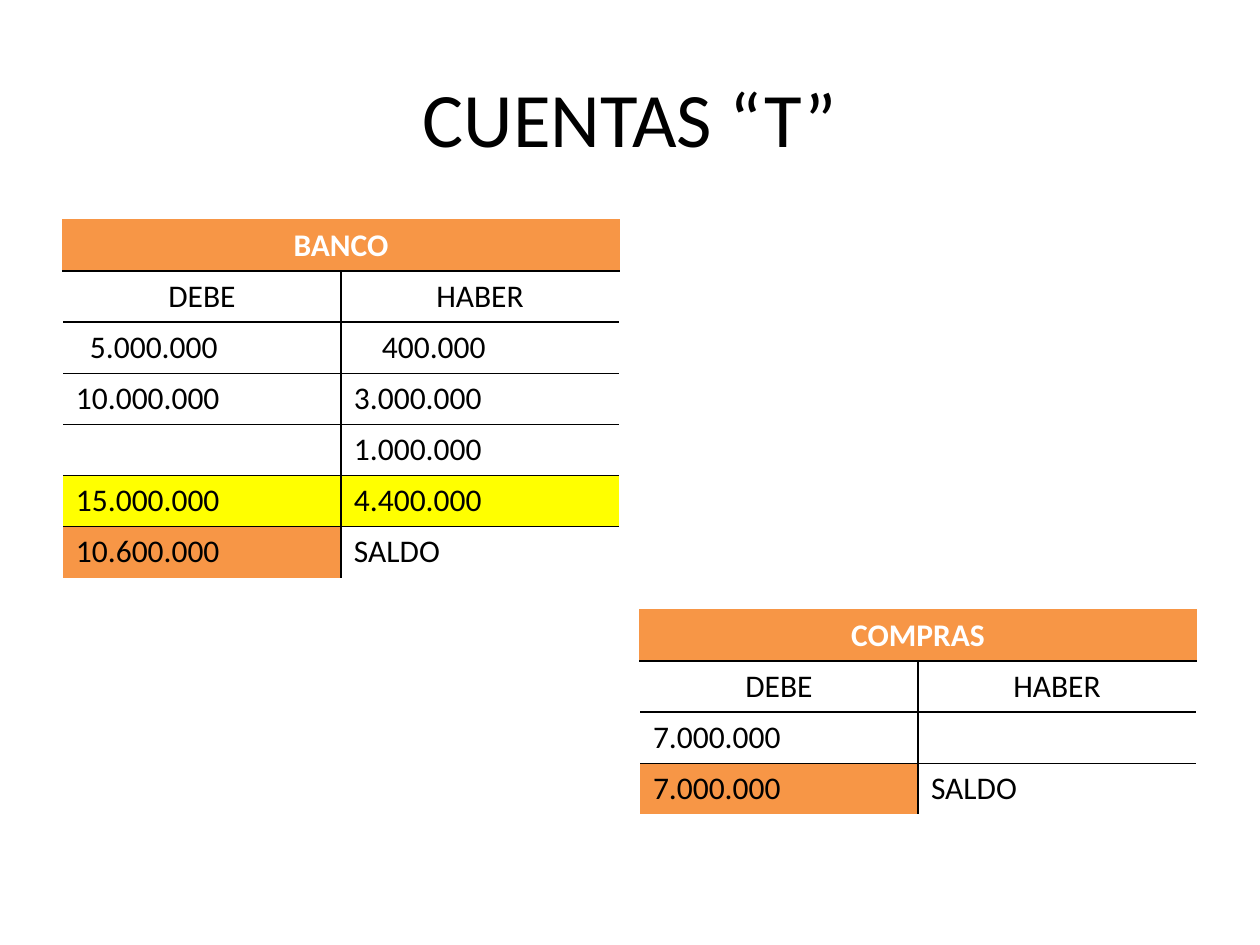
from lxml import etree
from pptx import Presentation
from pptx.dml.color import RGBColor
from pptx.enum.text import MSO_ANCHOR, PP_ALIGN
from pptx.oxml.ns import qn
from pptx.util import Emu, Pt

CENTER, LEFT, JUSTIFY = PP_ALIGN.CENTER, PP_ALIGN.LEFT, PP_ALIGN.JUSTIFY
MIDDLE = MSO_ANCHOR.MIDDLE
BLACK = RGBColor(0x00, 0x00, 0x00)
WHITE = RGBColor(0xFF, 0xFF, 0xFF)
ORANGE = RGBColor(0xF7, 0x96, 0x46)
YELLOW = RGBColor(0xFF, 0xFF, 0x00)
FONT = "Calibri"
TITLE_LAYOUT = 5
EMU_PER_PX = 914400 / 126
COLUMN_WIDTH, ROW_HEIGHT = 278, 51
CELL_MARGIN, SPACE_WIDTH = 13, 7

BANK_ENTRIES = [
    ("5.000.000", "400.000"),
    ("10.000.000", "3.000.000"),
    ("", "1.000.000"),
    ("15.000.000", "4.400.000"),
    ("10.600.000", "SALDO"),
]
PURCHASE_ENTRIES = [("7.000.000", ""), ("7.000.000", "SALDO")]


def px(length):
    """Convert pixels to EMU."""
    return Emu(round(length * EMU_PER_PX))


def format_text(text_frame, size, color, alignment, bold=False):
    """Format every run of a text frame."""
    for paragraph in text_frame.paragraphs:
        paragraph.alignment = alignment
        for run in paragraph.runs:
            run.font.name = FONT
            run.font.size = Pt(size)
            run.font.bold = bold
            run.font.color.rgb = color


def set_borders(cell, colors):
    """Draw the sides named in colors and hide the others."""
    properties = cell._tc.get_or_add_tcPr()
    for index, side in enumerate("LRTB"):
        line = etree.Element(qn(f"a:ln{side}"), w=str(Pt(1)))
        if side in colors:
            fill = etree.SubElement(line, qn("a:solidFill"))
            etree.SubElement(fill, qn("a:srgbClr"), val=str(colors[side]))
        else:
            etree.SubElement(line, qn("a:noFill"))
        properties.insert(index, line)


def fill_cell(cell, text, alignment, borders, fill=None, color=BLACK, bold=False):
    """Set the text, fill and borders of a cell."""
    cell.text = text
    cell.margin_left = cell.margin_right = px(CELL_MARGIN)
    format_text(cell.text_frame, 18, color, alignment, bold)
    if fill is None:
        cell.fill.background()
    else:
        cell.fill.solid()
        cell.fill.fore_color.rgb = fill
    set_borders(cell, borders)


def add_account(slide, name, entries, left, top):
    """Add a T account whose last entry is the balance."""
    rows = [("DEBE", "HABER"), *entries]
    row_count = len(rows) + 1
    frame = slide.shapes.add_table(
        row_count, 2, px(left), px(top), px(2 * COLUMN_WIDTH), px(row_count * ROW_HEIGHT)
    )
    table = frame.table
    table.first_row = table.horz_banding = False
    for column in table.columns:
        column.width = px(COLUMN_WIDTH)
    for row in table.rows:
        row.height = px(ROW_HEIGHT)

    header = table.cell(0, 0)
    header.merge(table.cell(0, 1))
    header_borders = {"L": ORANGE, "R": ORANGE, "T": ORANGE, "B": BLACK}
    for column in range(2):
        fill_cell(table.cell(0, column), "", CENTER, header_borders, ORANGE)
    header.text = name
    format_text(header.text_frame, 18, WHITE, CENTER, bold=True)

    for row_index, texts in enumerate(rows, start=1):
        is_balance = row_index == row_count - 1
        for column, text in enumerate(texts):
            sides = ("R", "L")[column] + ("T" if is_balance else "TB")
            alignment = CENTER if row_index == 1 else (LEFT, JUSTIFY)[column]
            fill = ORANGE if is_balance and column == 0 else None
            fill_cell(
                table.cell(row_index, column), text, alignment,
                dict.fromkeys(sides, BLACK), fill,
            )
    return table


def indent_cell(cell, spaces):
    """Move a short amount to the right by a number of space widths."""
    cell.margin_left = px(CELL_MARGIN + spaces * SPACE_WIDTH)


def add_title(slide, text):
    """Place and format the slide title."""
    title = slide.shapes.title
    title.left, title.top = px(63), px(38)
    title.width, title.height = px(1134), px(157)
    title.text_frame.text = text
    title.text_frame.vertical_anchor = MIDDLE
    format_text(title.text_frame, 44, BLACK, CENTER)


def main():
    """Build the slide of T accounts."""
    presentation = Presentation()
    presentation.slide_width, presentation.slide_height = px(1260), px(945)
    slide = presentation.slides.add_slide(presentation.slide_layouts[TITLE_LAYOUT])
    add_title(slide, "CUENTAS “T”")
    bank = add_account(slide, "BANCO", BANK_ENTRIES, 63, 220)
    for column, spaces in enumerate((2, 4)):
        indent_cell(bank.cell(2, column), spaces)
        total = bank.cell(5, column)
        total.fill.solid()
        total.fill.fore_color.rgb = YELLOW
    add_account(slide, "COMPRAS", PURCHASE_ENTRIES, 640, 610)
    presentation.save("out.pptx")


if __name__ == "__main__":
    main()
